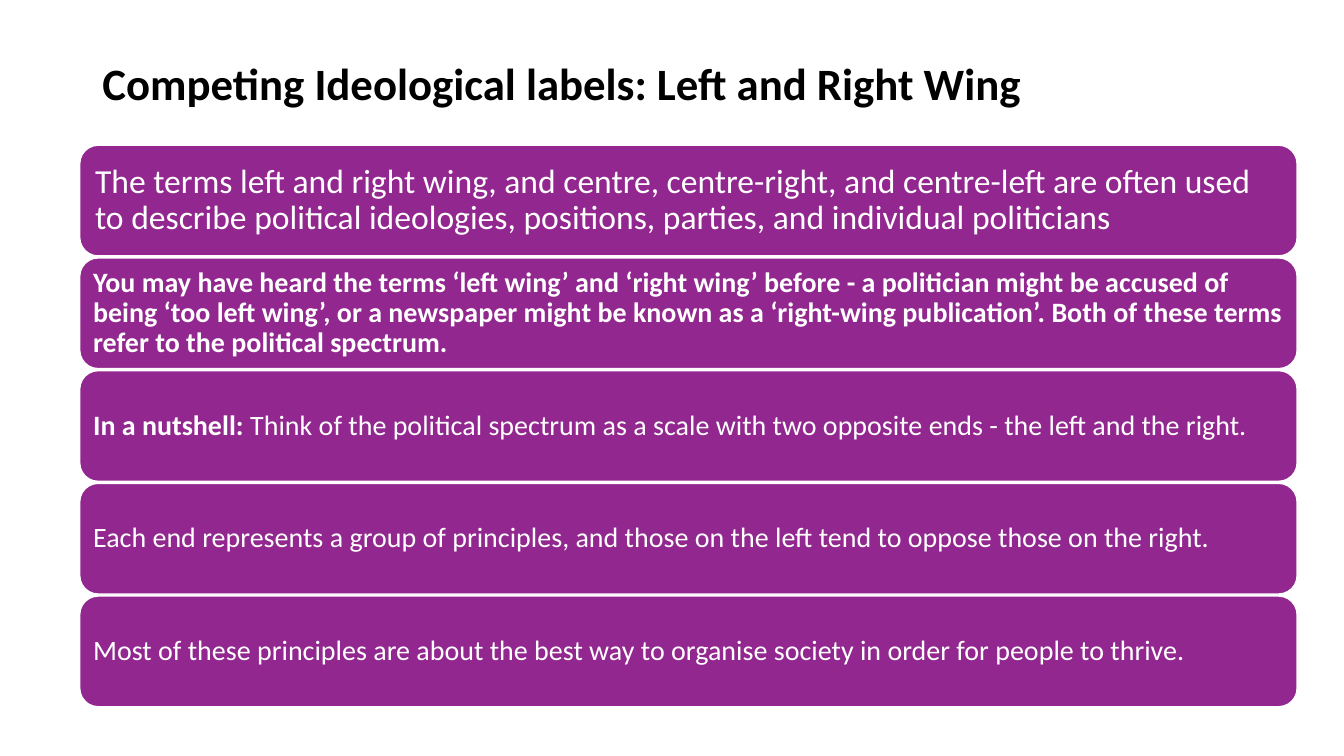
from dataclasses import dataclass

from pptx import Presentation
from pptx.dml.color import RGBColor
from pptx.enum.shapes import MSO_SHAPE
from pptx.enum.text import MSO_ANCHOR, PP_ALIGN
from pptx.slide import Slide
from pptx.text.text import TextFrame
from pptx.util import Cm, Pt

COLOURS = {"panel": "92278F", "white": "FFFFFF", "title": "000000"}
FONT = "Calibri"

# Panel stack, in centimetres
PANEL_LEFT, PANEL_TOP = 2.01, 3.66
PANEL_WIDTH, PANEL_HEIGHT = 30.68, 2.79
PANEL_PITCH = 2.84


@dataclass(frozen=True)
class Span:
    text: str
    bold: bool = False


@dataclass(frozen=True)
class Panel:
    spans: tuple[Span, ...]
    size: int = 20
    inset: float = 0.2


TITLE = Span("Competing Ideological labels: Left and Right Wing", bold=True)
PANELS = (
    Panel((Span("The terms left and right wing, and centre, centre-right, and centre-left are often used "
                "to describe political ideologies, positions, parties, and individual politicians"),),
          size=24, inset=0.25),
    Panel((Span("You may have heard the terms ‘left wing’ and ‘right wing’ before - a politician might be "
                "accused of being ‘too left wing’, or a newspaper might be known as a ‘right-wing "
                "publication’. Both of these terms refer to the political spectrum.", bold=True),)),
    Panel((Span("In a nutshell: ", bold=True),
           Span("Think of the political spectrum as a scale with two opposite ends - the left and the right."))),
    Panel((Span("Each end represents a group of principles, and those on the left tend to oppose "
                "those on the right."),)),
    Panel((Span("Most of these principles are about the best way to organise society in order "
                "for people to thrive."),)),
)


def colour(name: str) -> RGBColor:
    return RGBColor.from_string(COLOURS[name])


def write(frame: TextFrame, spans: tuple[Span, ...], size: int, ink: str) -> None:
    """Fill a frame with one left-aligned paragraph."""
    frame.word_wrap = True
    para = frame.paragraphs[0]
    para.alignment = PP_ALIGN.LEFT
    para.line_spacing = 0.9
    for span in spans:
        run = para.add_run()
        run.text = span.text
        run.font.name = FONT
        run.font.size = Pt(size)
        run.font.bold = span.bold
        run.font.color.rgb = colour(ink)


def add_title(page: Slide) -> None:
    box = page.shapes.add_textbox(Cm(2.33), Cm(1.01), Cm(29.21), Cm(3.68))
    frame = box.text_frame
    frame.vertical_anchor = MSO_ANCHOR.TOP
    frame.margin_top = Cm(0.56)
    write(frame, (TITLE,), 32, "title")


def add_panel(page: Slide, panel: Panel, row: int) -> None:
    box = page.shapes.add_shape(
        MSO_SHAPE.ROUNDED_RECTANGLE,
        Cm(PANEL_LEFT), Cm(PANEL_TOP + row * PANEL_PITCH), Cm(PANEL_WIDTH), Cm(PANEL_HEIGHT))
    box.shadow.inherit = False
    box.fill.solid()
    box.fill.fore_color.rgb = colour("panel")
    box.line.color.rgb = colour("white")
    box.line.width = Pt(1)
    frame = box.text_frame
    frame.vertical_anchor = MSO_ANCHOR.MIDDLE
    frame.margin_left = frame.margin_right = Cm(panel.inset)
    frame.margin_top = frame.margin_bottom = Cm(panel.inset)
    write(frame, panel.spans, panel.size, "white")


def main() -> None:
    deck = Presentation()
    deck.slide_width, deck.slide_height = Cm(33.87), Cm(19.05)
    page = deck.slides.add_slide(deck.slide_layouts[6])

    # Heading
    add_title(page)

    # Stacked statements
    for row, panel in enumerate(PANELS):
        add_panel(page, panel, row)

    deck.save("out.pptx")


if __name__ == "__main__":
    main()
